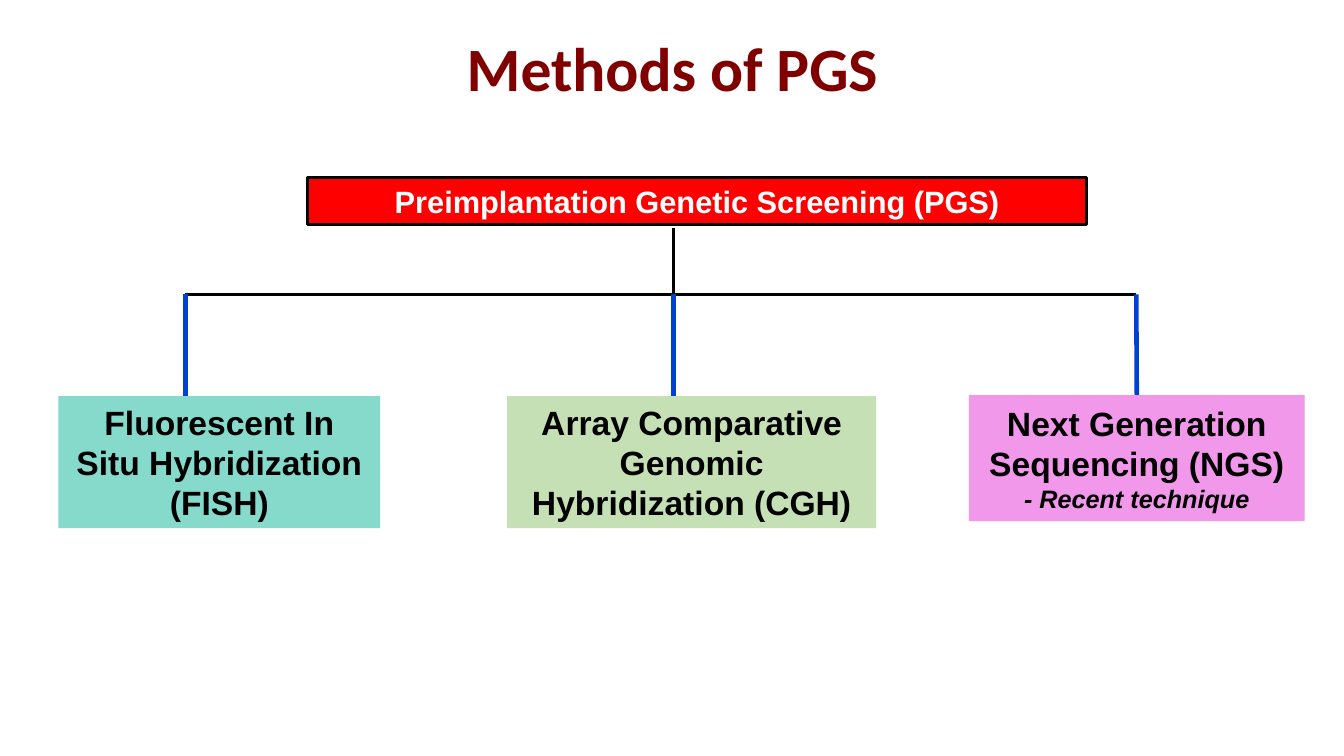
from pptx import Presentation
from pptx.dml.color import RGBColor
from pptx.enum.shapes import MSO_CONNECTOR, MSO_SHAPE
from pptx.enum.text import MSO_ANCHOR, PP_ALIGN
from pptx.oxml.ns import qn
from pptx.util import Inches, Pt
from lxml import etree


def color(value):
    return RGBColor.from_string(value)


class Diagram:
    BLACK, WHITE, BLUE, MAROON = "000000", "FFFFFF", "0041D2", "800000"
    BODY_FONT, TITLE_FONT = "Arial", "Calibri"

    def __init__(self, page):
        self.page = page

    def fill_text(self, frame, lines, ink, font):
        """Each line is (text, size, italic)."""
        frame.word_wrap = True
        frame.vertical_anchor = MSO_ANCHOR.MIDDLE
        frame.text = "\n".join(text for text, size, italic in lines)
        for para, (text, size, italic) in zip(frame.paragraphs, lines):
            para.alignment = PP_ALIGN.CENTER
            for span in para.runs:
                span.font.name = font
                span.font.size = Pt(size)
                span.font.bold = True
                span.font.italic = italic
                span.font.color.rgb = color(ink)

    def title(self, text, left, top, width, height):
        box = self.page.shapes.add_textbox(
            Inches(left), Inches(top), Inches(width), Inches(height))
        self.fill_text(box.text_frame, [(text, 44, False)], self.MAROON, self.TITLE_FONT)
        box.text_frame.paragraphs[0].line_spacing = 0.9

    def box(self, lines, left, top, width, height, fill, ink=BLACK, outline=None):
        box = self.page.shapes.add_shape(
            MSO_SHAPE.RECTANGLE, Inches(left), Inches(top), Inches(width), Inches(height))
        box.shadow.inherit = False
        box.fill.solid()
        box.fill.fore_color.rgb = color(fill)
        if outline:
            box.line.color.rgb = color(outline)
            box.line.width = Pt(2.25)
        else:
            box.line.fill.background()
        self.fill_text(box.text_frame, lines, ink, self.BODY_FONT)
        return box

    def line(self, x1, y1, x2, y2, ink=BLACK, weight=2.25):
        line = self.page.shapes.add_connector(
            MSO_CONNECTOR.STRAIGHT, Inches(x1), Inches(y1), Inches(x2), Inches(y2))
        line.line.color.rgb = color(ink)
        line.line.width = Pt(weight)
        etree.SubElement(line._element.spPr, qn("a:effectLst"))
        return line


def main():
    deck = Presentation()
    deck.slide_width, deck.slide_height = Inches(13.33), Inches(7.5)
    diagram = Diagram(deck.slides.add_slide(deck.slide_layouts[6]))

    # Title and root of the tree
    diagram.title("Methods of PGS", 0.92, 0.4, 11.5, 0.62)
    diagram.box([("Preimplantation Genetic Screening (PGS)", 22, False)],
                3.05, 1.76, 7.73, 0.47, "FF0000", diagram.WHITE, diagram.BLACK)

    # Trunk and crossbar
    left_x, trunk_x, right_x, bar_y = 1.84, 6.68, 11.27, 2.92
    diagram.line(trunk_x, 2.26, trunk_x, bar_y)
    diagram.line(left_x, bar_y, right_x, bar_y)

    # Branches: line x, then box lines, left, top, width, height, fill
    methods = [
        (left_x, [("Fluorescent In Situ Hybridization (FISH)", 24, False)],
         0.58, 3.93, 3.19, 1.31, "85DACC"),
        (trunk_x, [("Array Comparative Genomic Hybridization (CGH)", 24, False)],
         5.03, 3.93, 3.66, 1.31, "C5E0B4"),
        (right_x, [("Next Generation Sequencing (NGS)", 24, False),
                   ("- Recent technique", 18, True)],
         9.61, 3.92, 3.33, 1.25, "F198EA"),
    ]
    for x, lines, left, top, width, height, fill in methods:
        branch = diagram.line(x, bar_y, x, top, diagram.BLUE, 3.25)
        method = diagram.box(lines, left, top, width, height, fill)
        if abs(left + width / 2 - x) < 0.01:
            branch.end_connect(method, 0)

    deck.save("out.pptx")


if __name__ == "__main__":
    main()
